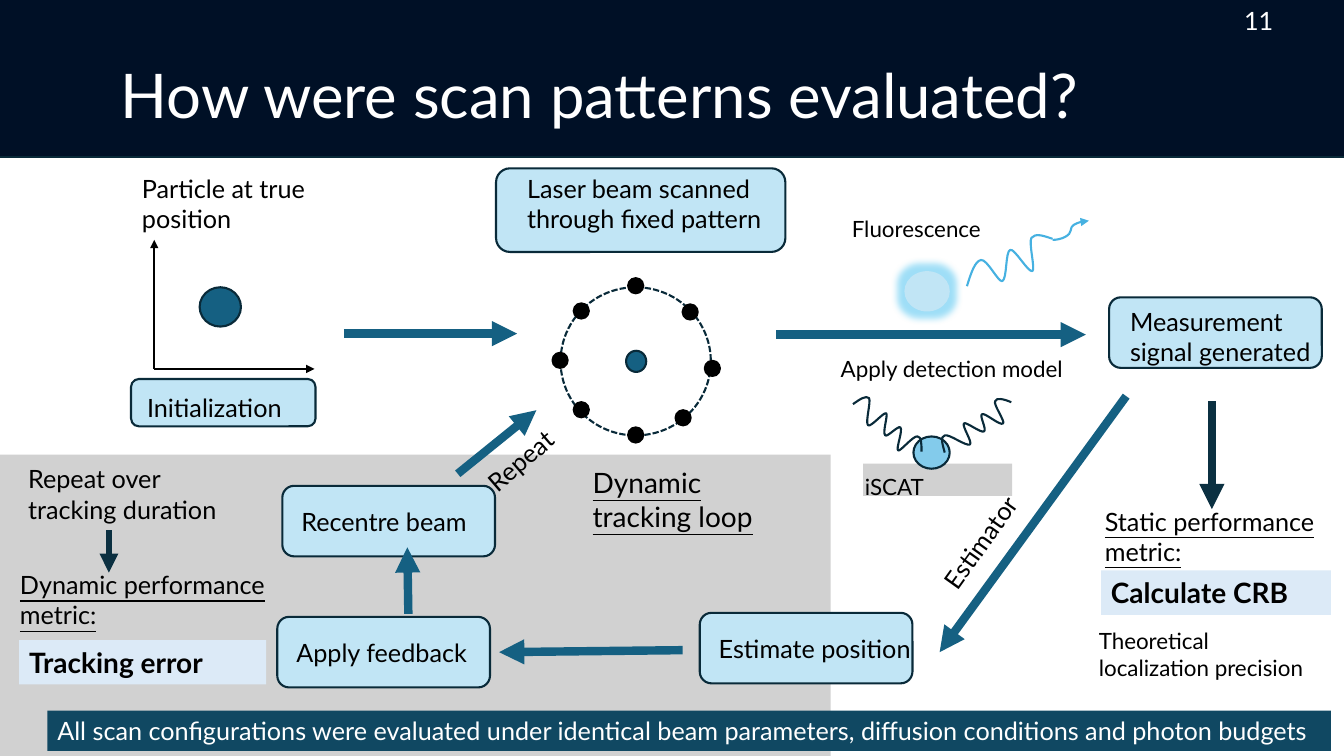
from lxml import etree
from pptx import Presentation
from pptx.dml.color import RGBColor
from pptx.enum import dml, shapes, text
from pptx.oxml import ns
from pptx.util import Inches, Pt

COLORS = {
    "black": "000000", "white": "FFFFFF", "header": "001026", "outline": "092A39",
    "box": "C1E5F5", "panel": "D1D1D1", "particle": "156082", "dark": "0B3041",
    "photon": "46B1E1", "scatterer": "83CBEB", "metric": "DCEAF7",
    "banner": "104862", "glow": "60CAF3",
}
RGB = {name: RGBColor.from_string(value) for name, value in COLORS.items()}
SHAPE = shapes.MSO_SHAPE

presentation = Presentation()
presentation.slide_width, presentation.slide_height = Inches(13.33), Inches(7.5)
slide = presentation.slides.add_slide(presentation.slide_layouts[6])


def add_block(kind, box, fill=None, line=None):
    shape = slide.shapes.add_shape(kind, *map(Inches, box))
    shape.shadow.inherit = False
    if fill:
        shape.fill.solid()
        shape.fill.fore_color.rgb = RGB[fill]
    else:
        shape.fill.background()
    if line:
        shape.line.color.rgb = RGB[line]
        shape.line.width = Pt(1.5)
    else:
        shape.line.fill.background()
    return shape


def write(shape, words, size=18, color="black", **formats):
    frame = shape.text_frame
    frame.word_wrap = True
    frame.vertical_anchor = text.MSO_ANCHOR.TOP
    paragraph = frame.paragraphs[0]
    paragraph.text = words
    paragraph.alignment = text.PP_ALIGN.LEFT
    font = paragraph.runs[0].font
    font.color.rgb = RGB[color]
    for name, value in {"name": "Lato", "size": Pt(size), **formats}.items():
        setattr(font, name, value)
    return frame


# Step boxes, tracking loop panel and header
add_block(SHAPE.ROUNDED_RECTANGLE, (1.3, 3.76, 1.83, 0.47), "box", "outline")
add_block(SHAPE.ROUNDED_RECTANGLE, (4.92, 1.67, 2.87, 0.83), "box", "outline")
add_block(SHAPE.RECTANGLE, (0, 4.51, 8.24, 2.99), "panel")
for left, top in [(2.8, 4.82), (2.75, 6.12), (6.94, 6.08), (11, 2.95)]:
    add_block(SHAPE.ROUNDED_RECTANGLE, (left, top, 2.11, 0.7), "box", "outline")
add_block(SHAPE.RECTANGLE, (-0.51, -0.25, 14, 1.81), "header", "outline")

title = slide.shapes.add_textbox(*map(Inches, (1.1, 0.25, 11.5, 1.45)))
title_frame = write(title, "How were scan patterns evaluated?", 44, "white")
title_frame.vertical_anchor = text.MSO_ANCHOR.MIDDLE
title_frame.paragraphs[0].line_spacing = 0.9

# Particle and scan pattern
add_block(SHAPE.OVAL, (1.98, 2.85, 0.41, 0.39), "particle", "outline")
orbit = add_block(SHAPE.OVAL, (5.56, 2.85, 1.49, 1.47), None, "outline")
orbit.line.dash_style = dml.MSO_LINE.SQUARE_DOT
scan_points = [(6.23, 2.76), (6.99, 3.58), (6.23, 4.24), (5.48, 3.5),
               (6.77, 3.02), (5.69, 3.99), (6.7, 4.07), (5.69, 3.01)]
for left, top in scan_points:
    add_block(SHAPE.OVAL, (left, top, 0.15, 0.15), "black", "black")
add_block(SHAPE.OVAL, (6.21, 3.48, 0.2, 0.21), "particle", "outline")

# Glowing fluorophore and scattering particle
fluorophore = add_block(SHAPE.OVAL, (8.97, 2.69, 0.45, 0.4), "box")
effects = fluorophore._element.spPr.find(ns.qn("a:effectLst"))
glow = etree.SubElement(effects, ns.qn("a:glow"), rad=str(Inches(0.14)))
glow_color = etree.SubElement(glow, ns.qn("a:srgbClr"), val=COLORS["glow"])
etree.SubElement(glow_color, ns.qn("a:alpha"), val="60000")
add_block(SHAPE.RECTANGLE, (8.56, 4.6, 1.48, 0.32), "panel")
add_block(SHAPE.OVAL, (9.06, 4.33, 0.36, 0.32), "scatterer", "outline")

# Light waves in hundredths of an inch: a start point, then three points a curve
waves = [
    ("photon", [(959, 284), (963, 271), (967, 259), (973, 258), (979, 257),
                (990, 280), (994, 279), (999, 277), (997, 249), (1002, 248),
                (1006, 246), (1020, 271), (1024, 269), (1027, 267), (1020, 241),
                (1023, 236), (1027, 231), (1035, 234), (1044, 237)]),
    ("outline", [(937, 449), (935, 441), (932, 433), (937, 432), (941, 430),
                 (958, 443), (962, 441), (965, 439), (954, 423), (956, 420),
                 (958, 418), (973, 430), (976, 428), (979, 426), (971, 412),
                 (974, 411), (977, 409), (992, 423), (995, 420), (997, 418),
                 (985, 401), (987, 398), (988, 394), (996, 396), (1003, 399)]),
    ("outline", [(846, 401), (853, 396), (859, 392), (862, 395), (864, 399),
                 (858, 419), (861, 422), (864, 424), (876, 409), (879, 410),
                 (881, 412), (875, 429), (878, 432), (880, 434), (891, 422),
                 (893, 424), (896, 427), (888, 446), (891, 447), (893, 448),
                 (906, 432), (910, 433), (914, 433), (914, 441), (914, 448)]),
]
for color, points in waves:
    builder = slide.shapes.build_freeform(*points[0], scale=Inches(0.01))
    builder.add_line_segments(points[1:], close=False)
    wave = builder.convert_to_shape()
    wave.shadow.inherit = False
    wave.fill.background()
    wave.line.color.rgb = RGB[color]
    wave.line.width = Pt(1.5)
    # Join every three straight segments into one cubic curve
    outline = next(wave._element.iter(ns.qn("a:moveTo"))).getparent()
    segments = outline.findall(ns.qn("a:lnTo"))
    for first in range(0, len(segments), 3):
        curve = etree.SubElement(outline, ns.qn("a:cubicBezTo"))
        for segment in segments[first:first + 3]:
            curve.append(segment[0])
            outline.remove(segment)

# Axes and arrows: from, to, colour, width
arrows = [
    ((1.53, 3.66), (1.53, 2.38), "black", 1.5),
    ((1.53, 3.66), (3.12, 3.66), "black", 1.5),
    ((10.44, 2.38), (10.8, 2.19), "photon", 1.5),
    ((1.08, 5.26), (1.08, 5.68), "dark", 4.5),
    ((3.41, 3.31), (5.13, 3.31), "particle", 6),
    ((7.7, 3.32), (10.77, 3.32), "particle", 6),
    ((11.17, 3.93), (9.32, 6.47), "particle", 6),
    ((12.02, 3.98), (12.02, 5.05), "dark", 6),
    ((6.77, 6.45), (4.95, 6.47), "particle", 6),
    ((4.05, 6.09), (4.04, 5.43), "particle", 6),
    ((4.54, 4.7), (5.32, 4.07), "particle", 6),
]
for start, end, color, width in arrows:
    kind = shapes.MSO_CONNECTOR.CURVE if color == "photon" else shapes.MSO_CONNECTOR.STRAIGHT
    arrow = slide.shapes.add_connector(kind, *map(Inches, start + end))
    arrow.line.color.rgb = RGB[color]
    arrow.line.width = Pt(width)
    etree.SubElement(arrow.line._get_or_add_ln(), ns.qn("a:tailEnd"), type="triangle")
    etree.SubElement(arrow._element.spPr, ns.qn("a:effectLst"))

# Labels: text, position, size, rotation, underline
labels = [
    ("Particle at true position", (1.31, 1.67, 2.05, 0.71), 18, 0, False),
    ("Laser beam scanned through fixed pattern", (5.13, 1.67, 3.29, 0.71), 18, 0, False),
    ("Initialization", (1.36, 3.84, 2.05, 0.4), 18, 0, False),
    ("Measurement signal generated", (11.11, 2.99, 2.28, 0.71), 18, 0, False),
    ("Apply detection model", (8.24, 3.47, 2.62, 0.37), 16, 0, False),
    ("Theoretical localization precision", (10.8, 6.17, 2.28, 0.64), 16, 0, False),
    ("iSCAT", (8.48, 4.64, 2.28, 0.37), 16, 0, False),
    ("Estimate position", (7.03, 6.23, 2.28, 0.4), 18, 0, False),
    ("Apply feedback", (2.84, 6.27, 2.28, 0.4), 18, 0, False),
    ("Recentre beam", (2.89, 4.97, 2.28, 0.4), 18, 0, False),
    ("Dynamic tracking loop", (5.78, 4.57, 2.28, 0.77), 20, 0, True),
    ("Repeat", (4.52, 3.94, 2.28, 0.4), 18, 319.3, False),
    ("Static performance metric:", (10.86, 4.97, 2.28, 0.71), 18, 0, True),
    ("Fluorescence", (8.35, 2.09, 2.28, 0.37), 16, 0, False),
    ("Repeat over tracking duration", (0.18, 4.55, 2.28, 0.71), 18, 0, False),
    ("Dynamic performance metric:", (0.1, 5.6, 2.64, 0.71), 18, 0, True),
    ("Estimator", (8.88, 4.76, 2.28, 0.4), 18, 305.5, False),
]
for words, box, size, rotation, underline in labels:
    label = slide.shapes.add_textbox(*map(Inches, box))
    label.rotation = rotation
    write(label, words, size, underline=underline)

# Metrics, conclusion and page number
for words, box in [("Calculate CRB", (10.92, 5.66, 2.28, 0.44)),
                   ("Tracking error", (0.19, 6.35, 2.45, 0.44))]:
    write(add_block(SHAPE.RECTANGLE, box, "metric"), words, 20, bold=True)
banner = add_block(SHAPE.RECTANGLE, (0.47, 7.05, 12.73, 0.4), "banner")
write(banner, "All scan configurations were evaluated under identical beam parameters, "
              "diffusion conditions and photon budgets", color="white")
page_number = slide.shapes.add_textbox(*map(Inches, (12.24, 0, 1.27, 0.4)))
write(page_number, "11", color="white")

presentation.save("out.pptx")
